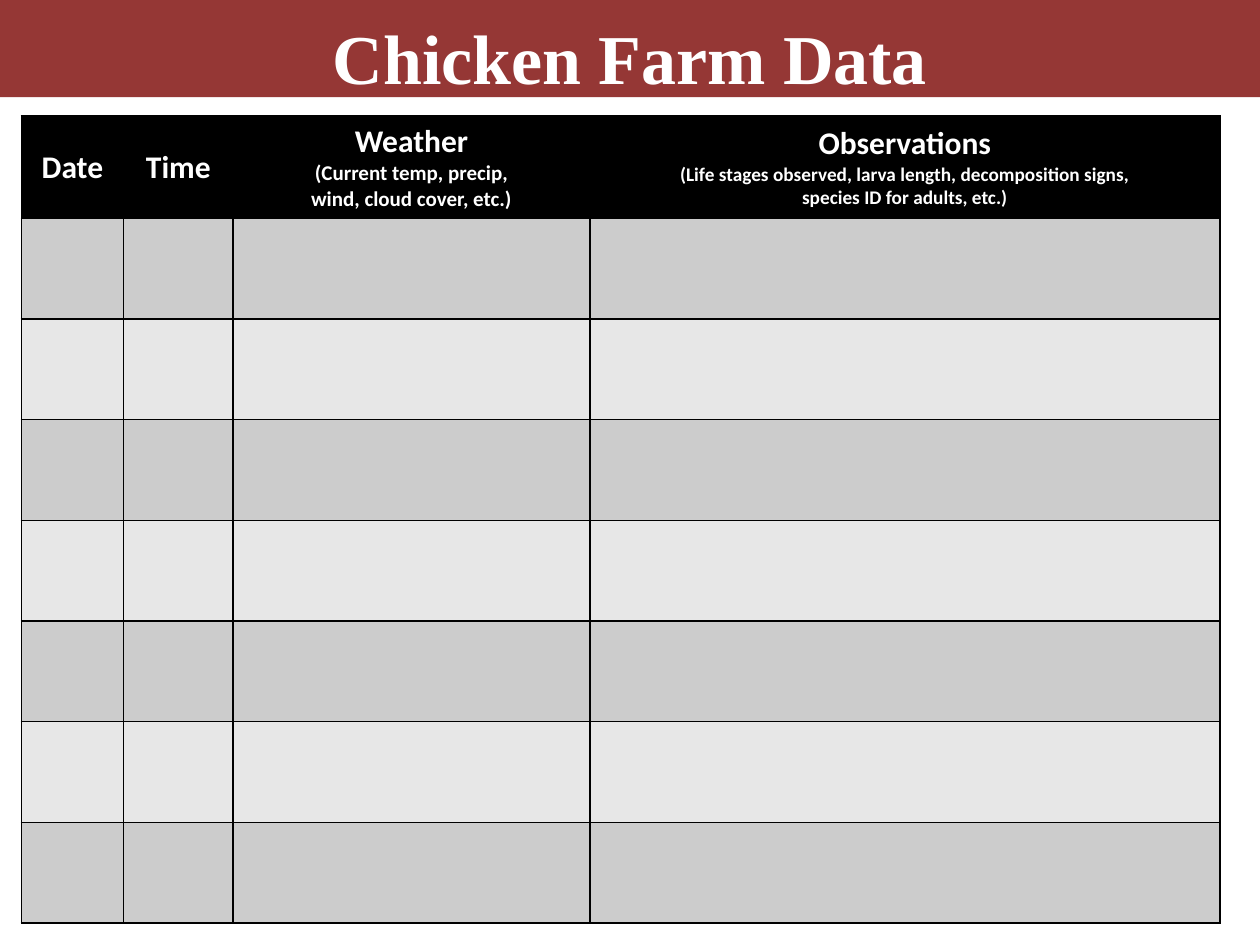
import pptx
import pptx.util
import pptx.dml.color
import pptx.enum.shapes
import pptx.enum.text
import pptx.oxml
import pptx.oxml.ns

Cm, Pt = pptx.util.Cm, pptx.util.Pt
PP_ALIGN = pptx.enum.text.PP_ALIGN
ANCHOR = pptx.enum.text.MSO_ANCHOR

# Content: each heading is a list of paragraphs, each paragraph a list of (line, size)
TITLE = "Chicken Farm Data"
HEADINGS = [
    [[("Date", 18)]],
    [[("Time", 18)]],
    [[("Weather", 18), ("(Current temp, precip,", 12), ("wind, cloud cover, etc.)", 12)]],
    [[("Observations", 18)],
     [("(Life stages observed, larva length, decomposition signs,", 11),
      ("species ID for adults, etc.)", 11)]],
]
ENTRY_ROWS = 7

COLORS = {"banner": "953735", "text": "FFFFFF", "heading": "000000",
          "border": "000000", "odd": "CCCCCC", "even": "E7E7E7"}
COLUMN_WIDTHS = [Cm(2.06), Cm(2.21), Cm(7.19), Cm(12.7)]
ROW_HEIGHT = Cm(2.03)


def rgb(key):
    return pptx.dml.color.RGBColor.from_string(COLORS[key])


def set_fill(part, key):
    part.fill.solid()
    part.fill.fore_color.rgb = rgb(key)


def apply_format(target, values):
    for attribute, value in values.items():
        setattr(target, attribute, value)


def add_line(paragraph, text, size, font_name):
    run = paragraph.add_run()
    run.text = text
    apply_format(run.font, {"name": font_name, "size": Pt(size), "bold": True})
    run.font.color.rgb = rgb("text")


def add_borders(cell):
    properties = cell._tc.get_or_add_tcPr()
    for side in ("lnL", "lnR", "lnT", "lnB"):
        properties.append(pptx.oxml.parse_xml(
            f'<a:{side} {pptx.oxml.ns.nsdecls("a")} w="12700"><a:solidFill>'
            f'<a:srgbClr val="{COLORS["border"]}"/></a:solidFill></a:{side}>'))


presentation = pptx.Presentation()
apply_format(presentation, {"slide_width": Cm(25.4), "slide_height": Cm(19.05)})
slide = presentation.slides.add_slide(presentation.slide_layouts[6])

# Title banner
banner = slide.shapes.add_shape(
    pptx.enum.shapes.MSO_SHAPE.RECTANGLE, 0, 0, presentation.slide_width, Cm(1.96))
banner.shadow.inherit = False
set_fill(banner, "banner")
banner.line.fill.background()
apply_format(banner.text_frame, {
    "word_wrap": True, "vertical_anchor": ANCHOR.TOP,
    "margin_top": Cm(0.29), "margin_bottom": 0})
title = banner.text_frame.paragraphs[0]
title.alignment = PP_ALIGN.CENTER
add_line(title, TITLE, 40, "Times New Roman")

# Data sheet grid
row_count = ENTRY_ROWS + 1
data_sheet = slide.shapes.add_table(
    row_count, len(HEADINGS), Cm(0.43), Cm(2.34),
    sum(COLUMN_WIDTHS), ROW_HEIGHT * row_count).table
for column, width in zip(data_sheet.columns, COLUMN_WIDTHS):
    column.width = width
for index, row in enumerate(data_sheet.rows):
    row.height = ROW_HEIGHT
    band = "heading" if index == 0 else ("odd" if index % 2 else "even")
    for cell in row.cells:
        add_borders(cell)
        set_fill(cell, band)

# Column headings
for cell, paragraphs in zip(data_sheet.rows[0].cells, HEADINGS):
    cell.vertical_anchor = ANCHOR.MIDDLE
    for number, lines in enumerate(paragraphs):
        frame = cell.text_frame
        paragraph = frame.add_paragraph() if number else frame.paragraphs[0]
        paragraph.alignment = PP_ALIGN.CENTER
        for position, (text, size) in enumerate(lines):
            if position:
                paragraph.add_line_break()
            add_line(paragraph, text, size, "Calibri")

presentation.save("out.pptx")
